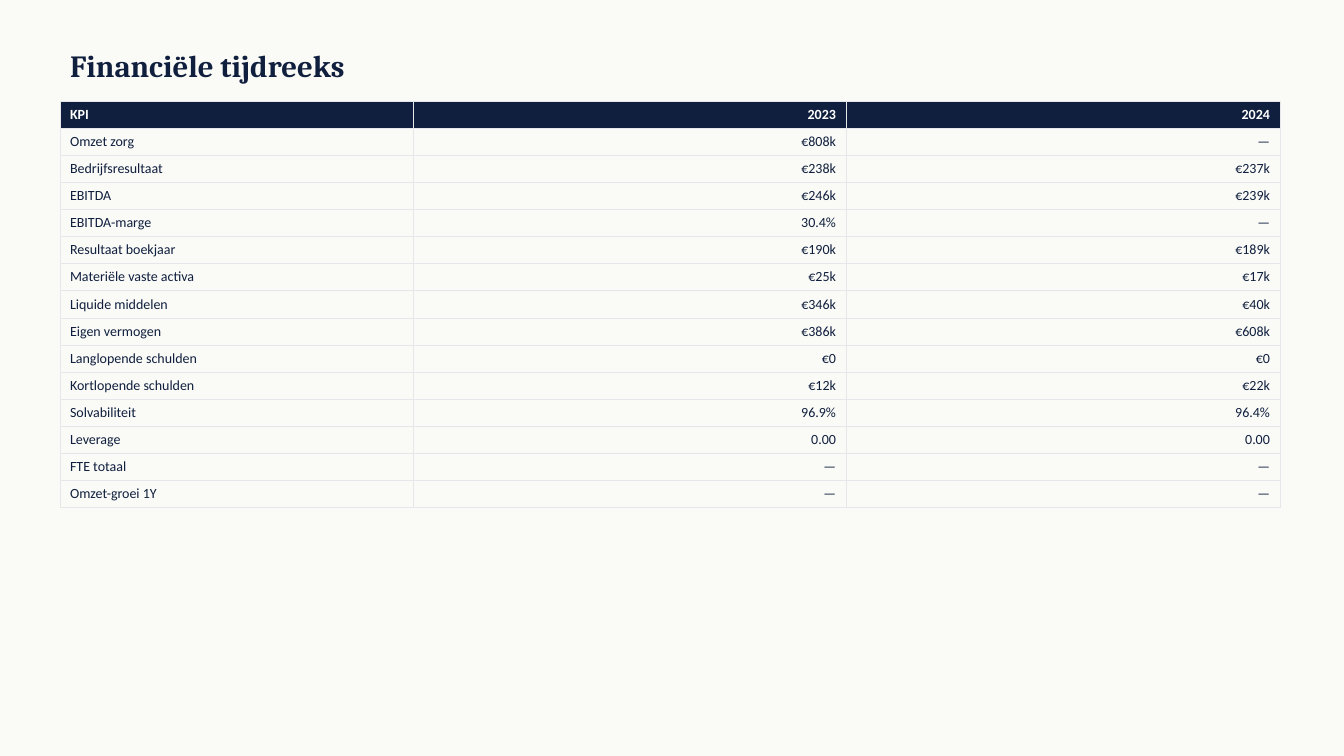
from lxml import etree
from pptx import Presentation
from pptx.dml.color import RGBColor
from pptx.enum.text import MSO_ANCHOR, MSO_AUTO_SIZE, PP_ALIGN
from pptx.oxml.ns import qn
from pptx.util import Pt

LEFT, RIGHT = PP_ALIGN.LEFT, PP_ALIGN.RIGHT
MIDDLE = MSO_ANCHOR.MIDDLE
NO_AUTOFIT = MSO_AUTO_SIZE.NONE

EMU_PER_PX = 914400 / 100.8
COLORS = {"navy": "0F1F3D", "white": "FFFFFF", "paper": "FAFAF7", "rule": "E5E7EB"}

COLUMN_WIDTHS = [353, 433, 434]
ROW_HEIGHT = 27
ROWS = [
    ("KPI", "2023", "2024"),
    ("Omzet zorg", "€808k", "—"),
    ("Bedrijfsresultaat", "€238k", "€237k"),
    ("EBITDA", "€246k", "€239k"),
    ("EBITDA-marge", "30.4%", "—"),
    ("Resultaat boekjaar", "€190k", "€189k"),
    ("Materiële vaste activa", "€25k", "€17k"),
    ("Liquide middelen", "€346k", "€40k"),
    ("Eigen vermogen", "€386k", "€608k"),
    ("Langlopende schulden", "€0", "€0"),
    ("Kortlopende schulden", "€12k", "€22k"),
    ("Solvabiliteit", "96.9%", "96.4%"),
    ("Leverage", "0.00", "0.00"),
    ("FTE totaal", "—", "—"),
    ("Omzet-groei 1Y", "—", "—"),
]


def px(n):
    return round(n * EMU_PER_PX)


def rgb(name):
    return RGBColor.from_string(COLORS[name])


def format_paragraph(p, font, size, color, bold, align):
    p.alignment = align
    p.font.name = font
    p.font.size = Pt(size)
    p.font.bold = bold
    p.font.color.rgb = rgb(color)


def set_title(slide, text, x, y, w, h):
    sp = slide.shapes.title
    sp.left, sp.top, sp.width, sp.height = px(x), px(y), px(w), px(h)
    tf = sp.text_frame
    tf.text = text
    tf.auto_size = NO_AUTOFIT
    tf.vertical_anchor = MIDDLE
    format_paragraph(tf.paragraphs[0], "Cambria", 22, "navy", True, LEFT)


def set_borders(cell, color, width):
    tc_pr = cell._tc.get_or_add_tcPr()
    for side in ("lnL", "lnR", "lnT", "lnB"):
        ln = etree.SubElement(tc_pr, qn(f"a:{side}"), w=str(Pt(width)))
        fill = etree.SubElement(ln, qn("a:solidFill"))
        etree.SubElement(fill, qn("a:srgbClr"), val=COLORS[color])


def fill_cell(cell, text, is_header, align):
    cell.text = text
    color = "white" if is_header else "navy"
    format_paragraph(cell.text_frame.paragraphs[0], "Calibri", 10, color, is_header, align)
    # Borders come before the fill in the cell properties
    set_borders(cell, "rule", 0.5)
    if is_header:
        cell.fill.solid()
        cell.fill.fore_color.rgb = rgb("navy")
    else:
        cell.fill.background()


def add_kpi_table(slide, rows, x, y):
    width, height = sum(COLUMN_WIDTHS), ROW_HEIGHT * len(rows)
    table = slide.shapes.add_table(
        len(rows), len(COLUMN_WIDTHS), px(x), px(y), px(width), px(height)
    ).table
    table.horz_banding = False
    for column, column_width in zip(table.columns, COLUMN_WIDTHS):
        column.width = px(column_width)
    for i, row in enumerate(rows):
        for j, text in enumerate(row):
            fill_cell(table.cell(i, j), text, i == 0, RIGHT if j else LEFT)


def main():
    prs = Presentation()
    prs.slide_width, prs.slide_height = px(1344), px(756)

    # Title-only slide on a paper background
    slide = prs.slides.add_slide(prs.slide_layouts[5])
    slide.background.fill.solid()
    slide.background.fill.fore_color.rgb = rgb("paper")

    # Content
    set_title(slide, "Financiële tijdreeks", 60, 40, 1210, 50)
    add_kpi_table(slide, ROWS, 60, 101)

    prs.save("out.pptx")


if __name__ == "__main__":
    main()
